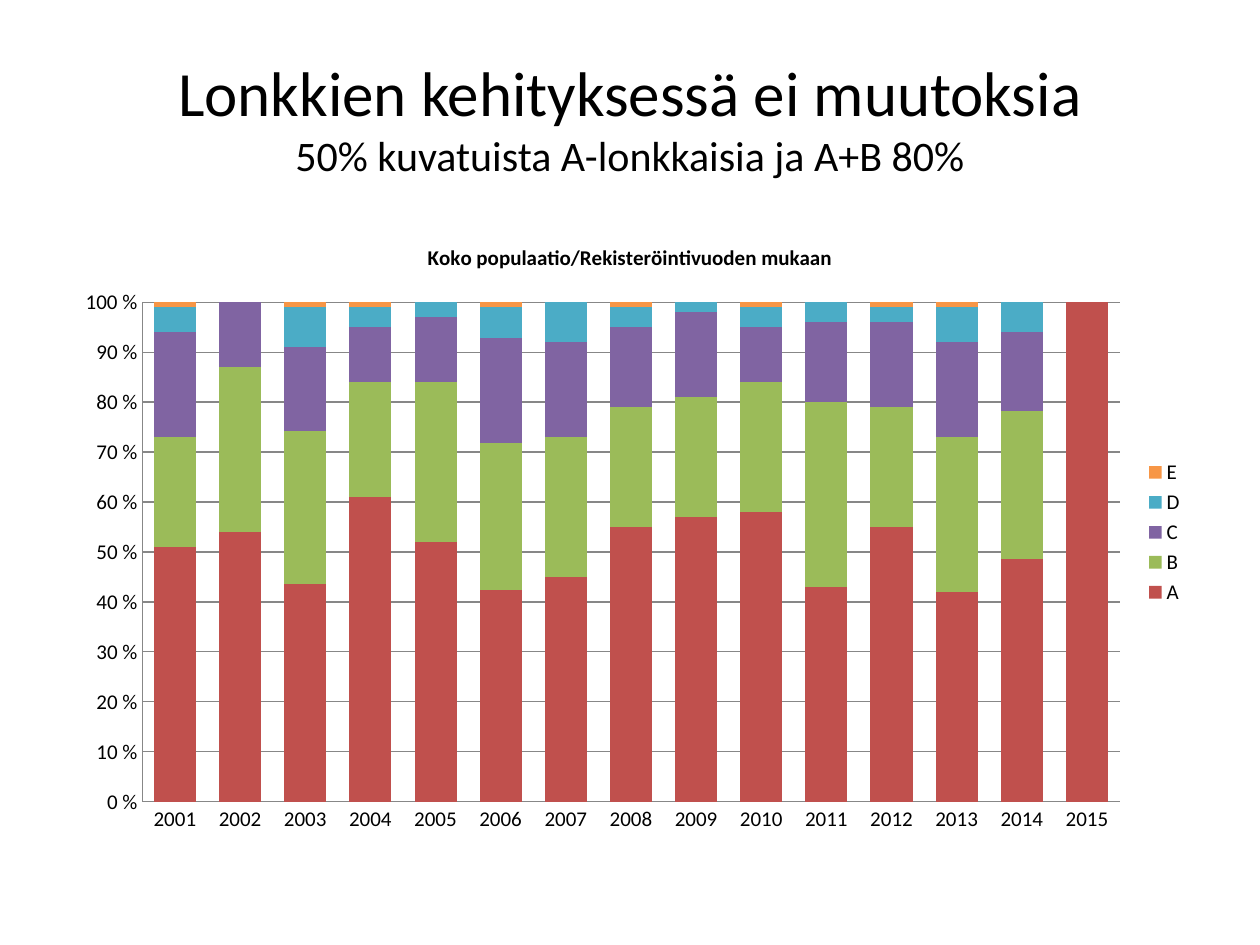
from pptx import Presentation
from pptx import util as u
from pptx.chart import data as chart_data
from pptx.dml import color
from pptx.enum import chart as kinds, text

FONT = "Calibri"
BLACK = "000000"
GREY = "878787"
YEARS = [str(year) for year in range(2001, 2016)]
GRADES = {
    "A": ("C0504D", [51, 54, 44, 61, 52, 42, 45, 55, 57, 58, 43, 55, 42, 49, 100]),
    "B": ("9BBB59", [22, 33, 31, 23, 32, 29, 28, 24, 24, 26, 37, 24, 31, 30, 0]),
    "C": ("8064A2", [21, 13, 17, 11, 13, 21, 19, 16, 17, 11, 16, 17, 19, 16, 0]),
    "D": ("4BACC6", [5, 0, 8, 4, 3, 6, 8, 4, 2, 4, 4, 3, 7, 6, 0]),
    "E": ("F79646", [1, 0, 1, 1, 0, 1, 0, 1, 0, 1, 0, 1, 1, 0, 0]),
}


def rgb(value):
    return color.RGBColor.from_string(value)


def set_font(font, size, bold=False):
    font.name = FONT
    font.size = u.Pt(size)
    font.bold = bold
    font.color.rgb = rgb(BLACK)


def place_title(slide, left, top, width, height):
    title = slide.shapes.title
    title.left, title.top = u.Pt(left), u.Pt(top)
    title.width, title.height = u.Pt(width), u.Pt(height)
    frame = title.text_frame
    frame.vertical_anchor = text.MSO_ANCHOR.MIDDLE
    frame.auto_size = text.MSO_AUTO_SIZE.NONE
    para = frame.paragraphs[0]
    para.alignment = text.PP_ALIGN.CENTER
    headline = para.add_run()
    headline.text = "Lonkkien kehityksessä ei muutoksia"
    set_font(headline.font, 36)
    para.add_line_break()
    subline = para.add_run()
    subline.text = "50% kuvatuista A-lonkkaisia ja A+B 80%"
    set_font(subline.font, 24)


def style_axis(axis):
    axis.major_tick_mark = kinds.XL_TICK_MARK.NONE
    axis.minor_tick_mark = kinds.XL_TICK_MARK.NONE
    axis.format.line.color.rgb = rgb(GREY)
    axis.format.line.width = u.Pt(0.75)
    set_font(axis.tick_labels.font, 12)


def place_chart(slide, left, top, width, height):
    table = chart_data.CategoryChartData()
    table.categories = YEARS
    for grade, (_, shares) in GRADES.items():
        table.add_series(grade, shares)
    chart = slide.shapes.add_chart(
        kinds.XL_CHART_TYPE.COLUMN_STACKED_100,
        u.Pt(left), u.Pt(top), u.Pt(width), u.Pt(height), table,
    ).chart
    set_font(chart.font, 10)

    chart.has_title = True
    heading = chart.chart_title.text_frame
    heading.text = "Koko populaatio/Rekisteröintivuoden mukaan"
    set_font(heading.paragraphs[0].runs[0].font, 12, bold=True)
    chart.chart_title.include_in_layout = False

    chart.has_legend = True
    chart.legend.position = kinds.XL_LEGEND_POSITION.RIGHT
    chart.legend.include_in_layout = False
    set_font(chart.legend.font, 12)

    style_axis(chart.category_axis)
    shares_axis = chart.value_axis
    style_axis(shares_axis)
    shares_axis.minimum_scale, shares_axis.maximum_scale = 0, 1
    shares_axis.major_unit = 0.1
    shares_axis.has_major_gridlines = True
    grid = shares_axis.major_gridlines.format.line
    grid.color.rgb = rgb(GREY)
    grid.width = u.Pt(0.75)
    shares_axis.tick_labels.number_format = "0 %"
    shares_axis.tick_labels.number_format_is_linked = False

    plot = chart.plots[0]
    plot.gap_width = 55
    plot.overlap = 100
    plot.vary_by_categories = False
    for series in plot.series:
        series.format.fill.solid()
        series.format.fill.fore_color.rgb = rgb(GRADES[series.name][0])


def main():
    deck = Presentation()
    deck.slide_width, deck.slide_height = u.Pt(720), u.Pt(540)
    slide = deck.slides.add_slide(deck.slide_layouts[5])
    place_title(slide, 36, 21.6, 648, 90)
    place_chart(slide, 36, 126, 648, 356.4)
    deck.save("out.pptx")


if __name__ == "__main__":
    main()
